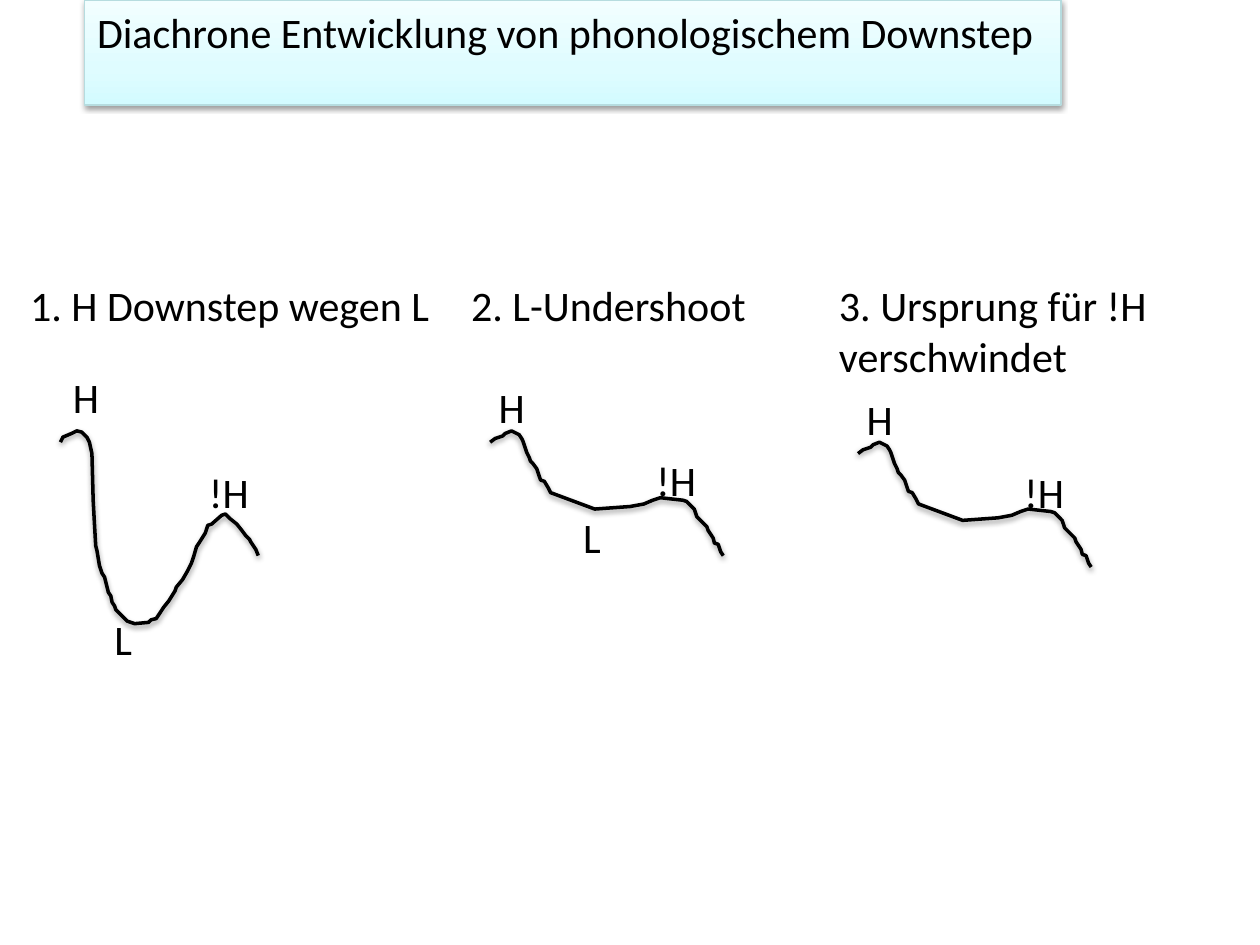
"""Build a slide on the diachronic development of phonological downstep."""
import copy

import pptx
import pptx.dml.color
import pptx.enum.text
import pptx.oxml
import pptx.oxml.ns
import pptx.util

COLOURS = {"ink": "000000", "bar_low": "D3FBFF", "bar_mid": "DFFCFF",
           "bar_high": "F2FEFF", "bar_edge": "B6DCDF"}
WIDTH, HEIGHT = pptx.util.Inches(10), pptx.util.Inches(7.5)
COLUMNS, ROWS = 1000, 750
CELL_W, CELL_H = WIDTH // COLUMNS, HEIGHT // ROWS
FRAME_FORMAT = {"word_wrap": True,
                "auto_size": pptx.enum.text.MSO_AUTO_SIZE.SHAPE_TO_FIT_TEXT,
                "vertical_anchor": pptx.enum.text.MSO_ANCHOR.TOP}
FONT_FORMAT = {"name": "Calibri", "size": pptx.util.Pt(24)}
SHADOW_XML = (
    f'<a:outerShdw {pptx.oxml.ns.nsdecls("a")} blurRad="40000" dist="20000" '
    'dir="5400000" rotWithShape="0"><a:srgbClr val="000000">'
    '<a:alpha val="38000"/></a:srgbClr></a:outerShdw>')

FULL_DIP = [
    (0, 9), (2, 5), (9, 2), (13, 0), (17, 1), (21, 5), (23, 9), (25, 18), (26, 55),
    (27, 73), (28, 91), (29, 95), (31, 107), (33, 113), (35, 116), (38, 128),
    (40, 131), (41, 136), (43, 139), (44, 142), (51, 149), (53, 151), (59, 153),
    (70, 152), (72, 150), (76, 149), (78, 146), (82, 140), (86, 135), (91, 127),
    (92, 124), (97, 118), (101, 111), (104, 105), (106, 99), (108, 92), (110, 89),
    (115, 81), (117, 75), (120, 74), (128, 67), (131, 66), (135, 70), (140, 74),
    (144, 79), (147, 83), (150, 86), (151, 88), (155, 94), (157, 99)]
SHALLOW_DIP = [
    (0, 9), (4, 6), (10, 4), (12, 2), (17, 0), (23, 3), (25, 6), (26, 8), (29, 17),
    (31, 21), (32, 24), (34, 26), (37, 30), (39, 36), (40, 39), (43, 40), (46, 45),
    (48, 49), (83, 62), (111, 60), (122, 58), (129, 55), (135, 53), (153, 55),
    (156, 56), (162, 62), (163, 65), (164, 68), (167, 71), (172, 76), (173, 79),
    (175, 82), (177, 85), (178, 89), (181, 90), (183, 96), (185, 99)]
FULL_TONES = {"H": (0, -52, 67), "!H": (108, 23, 67), "L": (33, 140, 83)}
SHALLOW_TONES = {"H": (-3, -44, 67), "!H": (122, 14, 67), "L": (64, 59, 83)}
SURFACE_TONES = {tone: SHALLOW_TONES[tone] for tone in ("H", "!H")}

STAGES = [
    {"box": (14, 217, 358, 50), "heading": "1. H Downstep wegen L",
     "start": (34, 125), "contour": FULL_DIP, "tones": FULL_TONES},
    {"box": (364, 217, 250, 50), "heading": "2. L-Undershoot",
     "start": (25, 125), "contour": SHALLOW_DIP, "tones": SHALLOW_TONES},
    {"box": (656, 217, 342, 91), "heading": "3. Ursprung für !H verschwindet",
     "start": (25, 134), "contour": SHALLOW_DIP, "tones": SURFACE_TONES}]


def colour(key):
    """Return the named colour."""
    return pptx.dml.color.RGBColor.from_string(COLOURS[key])


def to_emu(box):
    """Turn a box in grid columns and rows into lengths."""
    left, top, width, height = box
    return left * CELL_W, top * CELL_H, width * CELL_W, height * CELL_H


def assign(target, values):
    """Set each attribute in the dict on the target."""
    for attribute, value in values.items():
        setattr(target, attribute, value)


def write(frame, wording):
    """Fill a text frame with one formatted paragraph."""
    assign(frame, FRAME_FORMAT)
    paragraph = frame.paragraphs[0]
    paragraph.alignment = pptx.enum.text.PP_ALIGN.LEFT
    run = paragraph.add_run()
    run.text = wording
    assign(run.font, FONT_FORMAT)
    run.font.color.rgb = colour("ink")


def outline(shape, key, points):
    """Give a shape its line and a soft drop shadow."""
    shape.line.color.rgb = colour(key)
    shape.line.width = pptx.util.Pt(points)
    properties = shape._element.spPr
    effects = properties.find(pptx.oxml.ns.qn("a:effectLst"))
    if effects is None:
        effects = pptx.oxml.parse_xml(f'<a:effectLst {pptx.oxml.ns.nsdecls("a")}/>')
        properties.append(effects)
    effects.append(pptx.oxml.parse_xml(SHADOW_XML))


def title_bar(slide, box, wording):
    """Place the title with its vertical gradient."""
    title = slide.shapes.title
    assign(title, dict(zip(("left", "top", "width", "height"), to_emu(box))))
    write(title.text_frame, wording)
    title.fill.gradient()
    title.fill.gradient_angle = 90
    stops = title._element.spPr.find(".//" + pptx.oxml.ns.qn("a:gsLst"))
    stops.insert(1, copy.deepcopy(stops[0]))
    shades = (("bar_low", 0), ("bar_mid", 0.35), ("bar_high", 1))
    for stop, (key, position) in zip(title.fill.gradient_stops, shades):
        stop.color.rgb = colour(key)
        stop.position = position
    outline(title, "bar_edge", 0.75)


def label(slide, box, wording):
    """Place a text box on the grid."""
    write(slide.shapes.add_textbox(*to_emu(box)).text_frame, wording)


def stage(slide, box, heading, start, contour, tones):
    """Place one stage: heading, pitch contour and tone labels."""
    label(slide, box, heading)
    left, top = box[0] + start[0], box[1] + start[1]
    builder = slide.shapes.build_freeform(*contour[0], scale=(CELL_W, CELL_H))
    builder.add_line_segments(contour[1:], close=False)
    pitch = builder.convert_to_shape(left * CELL_W, top * CELL_H)
    pitch.shadow.inherit = False
    pitch.fill.background()
    outline(pitch, "ink", 2)
    for tone, (across, down, width) in tones.items():
        label(slide, (left + across, top + down, width, 51), tone)


def main():
    """Build and save the slide."""
    deck = pptx.Presentation()
    assign(deck, {"slide_width": WIDTH, "slide_height": HEIGHT})
    slide = deck.slides.add_slide(deck.slide_layouts[5])
    title_bar(slide, (67, 0, 775, 51),
              "Diachrone Entwicklung von phonologischem Downstep")
    for parts in STAGES:
        stage(slide, **parts)
    deck.save("out.pptx")


if __name__ == "__main__":
    main()
